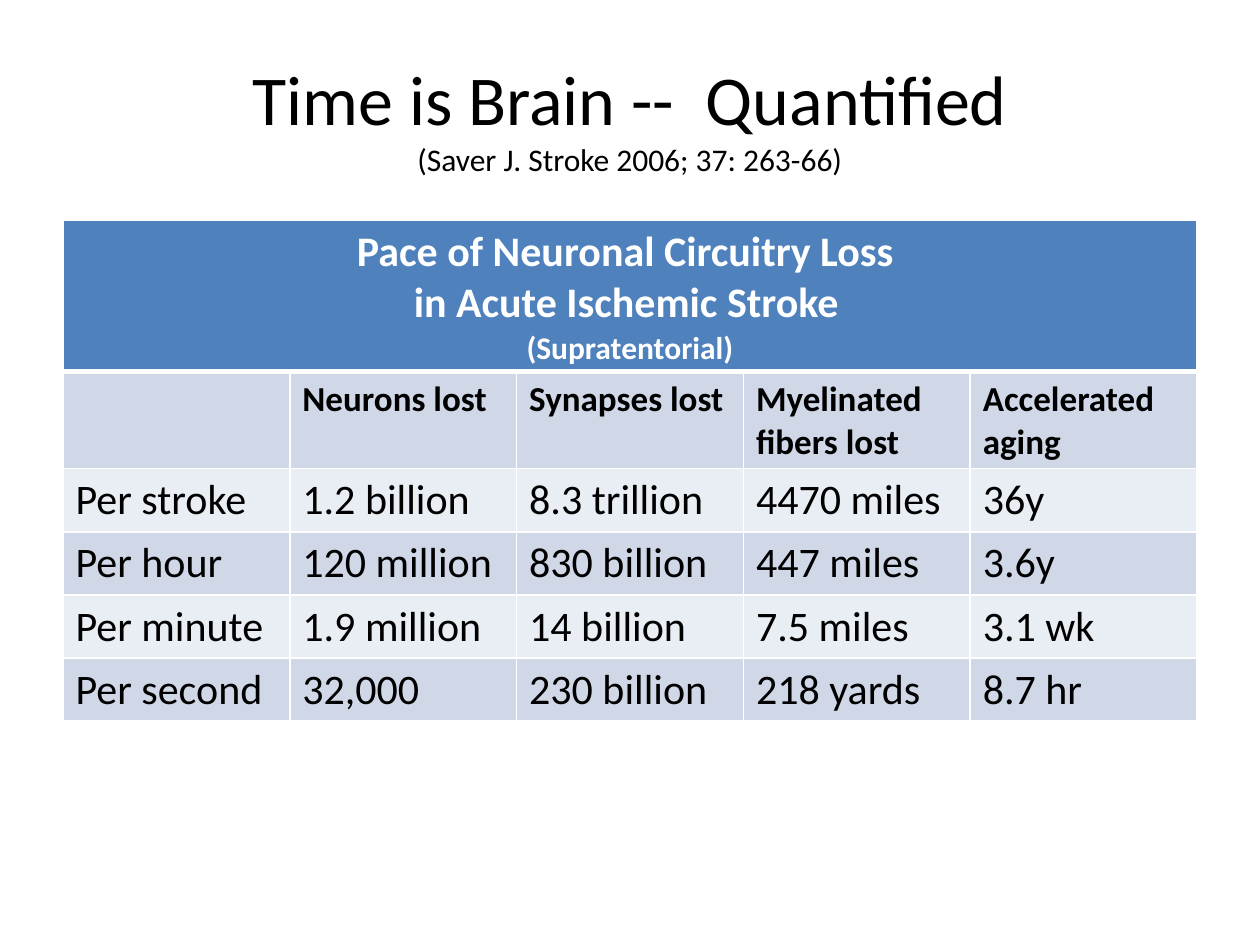
from lxml import etree
from pptx import Presentation
from pptx.dml.color import RGBColor
from pptx.enum import text
from pptx.oxml.ns import qn
from pptx.util import Inches, Pt

# Content: paragraphs are lists of (wording, size) runs
TITLE = [[("Time is Brain --  Quantified", 40)],
         [("(Saver J. Stroke 2006; 37: 263-66)", 18)]]
HEADING = [[("Pace of Neuronal Circuitry Loss ", 24)],
           [("in Acute Ischemic Stroke", 24), (" ", 18)],
           [("(Supratentorial)", 18)]]
COLUMNS = ["", "Neurons lost", "Synapses lost", "Myelinated fibers lost",
           "Accelerated aging"]
LOSSES = [
    ["Per stroke", "1.2 billion", "8.3 trillion", "4470 miles", "36y"],
    ["Per hour", "120 million", "830 billion", "447 miles", "3.6y"],
    ["Per minute", "1.9 million", "14 billion", "7.5 miles", "3.1 wk"],
    ["Per second", "32,000", "230 billion", "218 yards", "8.7 hr"],
]
BLUE, BANDS = "4F81BD", ("E9EDF4", "D0D8E8")
BLACK, WHITE = "000000", "FFFFFF"
LEFT, WIDTH = 0.5, 9
ROW_HEIGHTS = [1.2, 0.77] + [0.5] * len(LOSSES)


def rgb(value):
    return RGBColor.from_string(value)


def write(tf, paragraphs, color=BLACK, bold=False, align=text.PP_ALIGN.LEFT):
    for i, runs in enumerate(paragraphs):
        p = tf.add_paragraph() if i else tf.paragraphs[0]
        p.alignment = align
        for wording, size in runs:
            r = p.add_run()
            r.text = wording
            r.font.name, r.font.size, r.font.bold = "Calibri", Pt(size), bold
            r.font.color.rgb = rgb(color)


def style_cell(cell, fill, bottom=1):
    tcPr = cell._tc.get_or_add_tcPr()
    for side, width in (("L", 1), ("R", 1), ("T", 1), ("B", bottom)):
        ln = etree.SubElement(tcPr, qn(f"a:ln{side}"), w=str(Pt(width)))
        solid = etree.SubElement(ln, qn("a:solidFill"))
        etree.SubElement(solid, qn("a:srgbClr"), val=WHITE)
    cell.fill.solid()
    cell.fill.fore_color.rgb = rgb(fill)


prs = Presentation()
prs.slide_width, prs.slide_height = Inches(10), Inches(7.5)
s = prs.slides.add_slide(prs.slide_layouts[6])

# Title
tf = s.shapes.add_textbox(Inches(LEFT), Inches(0.3), Inches(WIDTH),
                          Inches(1.25)).text_frame
tf.word_wrap = True
tf.vertical_anchor = text.MSO_ANCHOR.MIDDLE
write(tf, TITLE, align=text.PP_ALIGN.CENTER)

# Table grid
table = s.shapes.add_table(len(ROW_HEIGHTS), len(COLUMNS), Inches(LEFT),
                           Inches(1.75), Inches(WIDTH),
                           Inches(sum(ROW_HEIGHTS))).table
for column in table.columns:
    column.width = Inches(WIDTH / len(COLUMNS))
for row, height in zip(table.rows, ROW_HEIGHTS):
    row.height = Inches(height)

# Heading across all columns
for cell in table.rows[0].cells:
    style_cell(cell, BLUE, bottom=3)
heading = table.cell(0, 0)
heading.merge(table.cell(0, len(COLUMNS) - 1))
write(heading.text_frame, HEADING, color=WHITE, bold=True,
      align=text.PP_ALIGN.CENTER)

# Column names and losses
for i, values in enumerate([COLUMNS] + LOSSES, start=1):
    is_names = i == 1
    for j, value in enumerate(values):
        cell = table.cell(i, j)
        style_cell(cell, BANDS[i % 2])
        if value:
            write(cell.text_frame, [[(value, 20 if is_names else 24)]],
                  bold=is_names)

prs.save("out.pptx")
